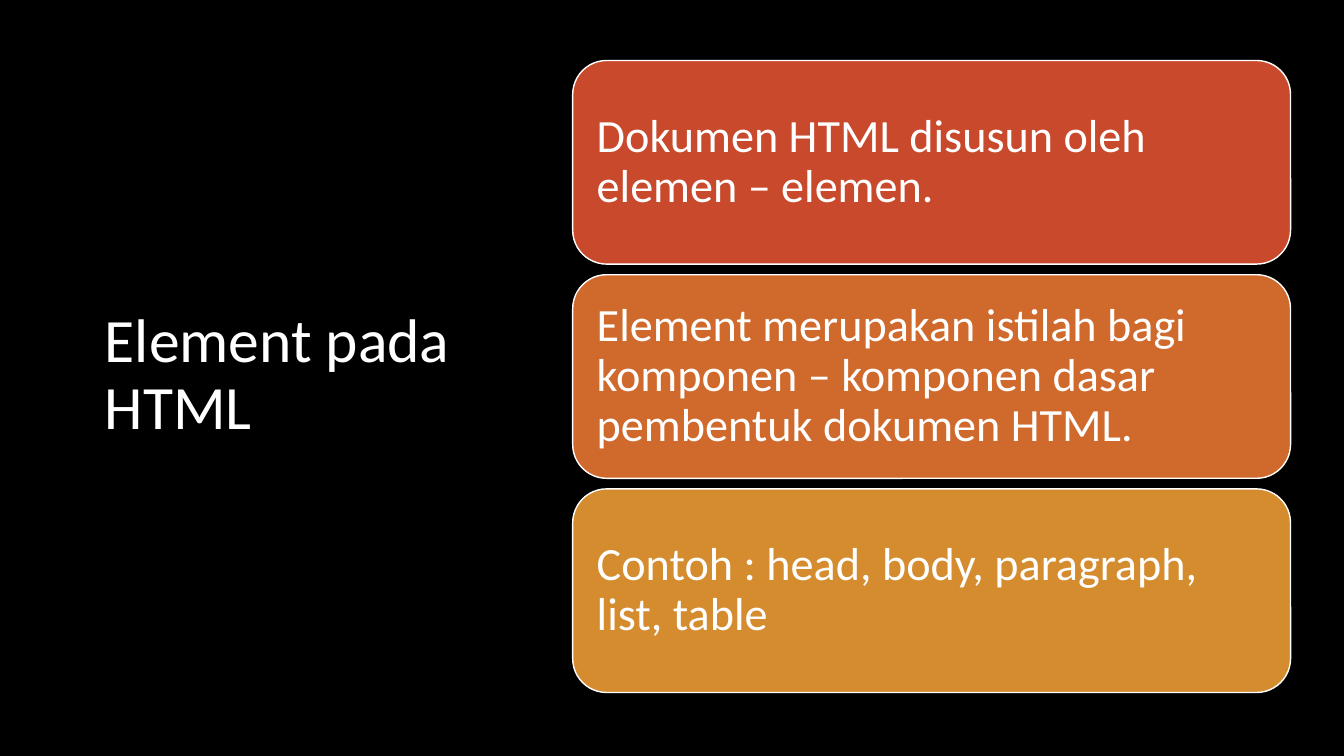
import pptx
import pptx.util
import pptx.dml.color
import pptx.enum.shapes
import pptx.enum.text

WIDE, HIGH = 13.33, 7.5
LEFT, TOP, SPAN, TALL, STEP = 5.68, 0.6, 7.12, 2.02, 2.125
INK = {"back": "000000", "text": "FFFFFF", "red": "C9492C",
       "rust": "D0692C", "gold": "D58C2E"}
CARDS = [
    ("red", "Dokumen HTML disusun oleh elemen – elemen."),
    ("rust", "Element merupakan istilah bagi komponen – komponen dasar "
             "pembentuk dokumen HTML."),
    ("gold", "Contoh : head, body, paragraph, list, table"),
]


def tint(name):
    """Return the named colour."""
    return pptx.dml.color.RGBColor.from_string(INK[name])


def place(shape, *box):
    """Put a shape at left, top, width and height in inches."""
    shape.left, shape.top, shape.width, shape.height = map(pptx.util.Inches, box)


def write(shape, text, size, inset):
    """Fill a shape with left-aligned text, centred in height."""
    frame = shape.text_frame
    frame.text = text
    frame.word_wrap = True
    frame.auto_size = pptx.enum.text.MSO_AUTO_SIZE.NONE
    frame.vertical_anchor = pptx.enum.text.MSO_ANCHOR.MIDDLE
    frame.margin_left = frame.margin_right = pptx.util.Inches(inset)
    para = frame.paragraphs[0]
    para.alignment = pptx.enum.text.PP_ALIGN.LEFT
    para.line_spacing = 0.9
    para.font.name = "Calibri"
    para.font.size = pptx.util.Pt(size)
    para.font.color.rgb = tint("text")


def card(slide, row, name, text):
    """Draw one rounded card in the given row."""
    kind = pptx.enum.shapes.MSO_SHAPE.ROUNDED_RECTANGLE
    shape = slide.shapes.add_shape(kind, 0, 0, 0, 0)
    place(shape, LEFT, TOP + row * STEP, SPAN, TALL)
    shape.shadow.inherit = False
    shape.fill.solid()
    shape.fill.fore_color.rgb = tint(name)
    shape.line.color.rgb = tint("text")
    shape.line.width = pptx.util.Pt(1)
    write(shape, text, 33, 0.14)


def main():
    """Build and save the slide."""
    deck = pptx.Presentation()
    deck.slide_width = pptx.util.Inches(WIDE)
    deck.slide_height = pptx.util.Inches(HIGH)
    slide = deck.slides.add_slide(deck.slide_layouts[5])
    slide.background.fill.solid()
    slide.background.fill.fore_color.rgb = tint("back")
    title = slide.shapes.title
    place(title, 0.94, 1.11, 3.74, 5.24)
    write(title, "Element pada HTML", 44, 0.1)
    for row, (name, text) in enumerate(CARDS):
        card(slide, row, name, text)
    deck.save("out.pptx")


if __name__ == "__main__":
    main()
